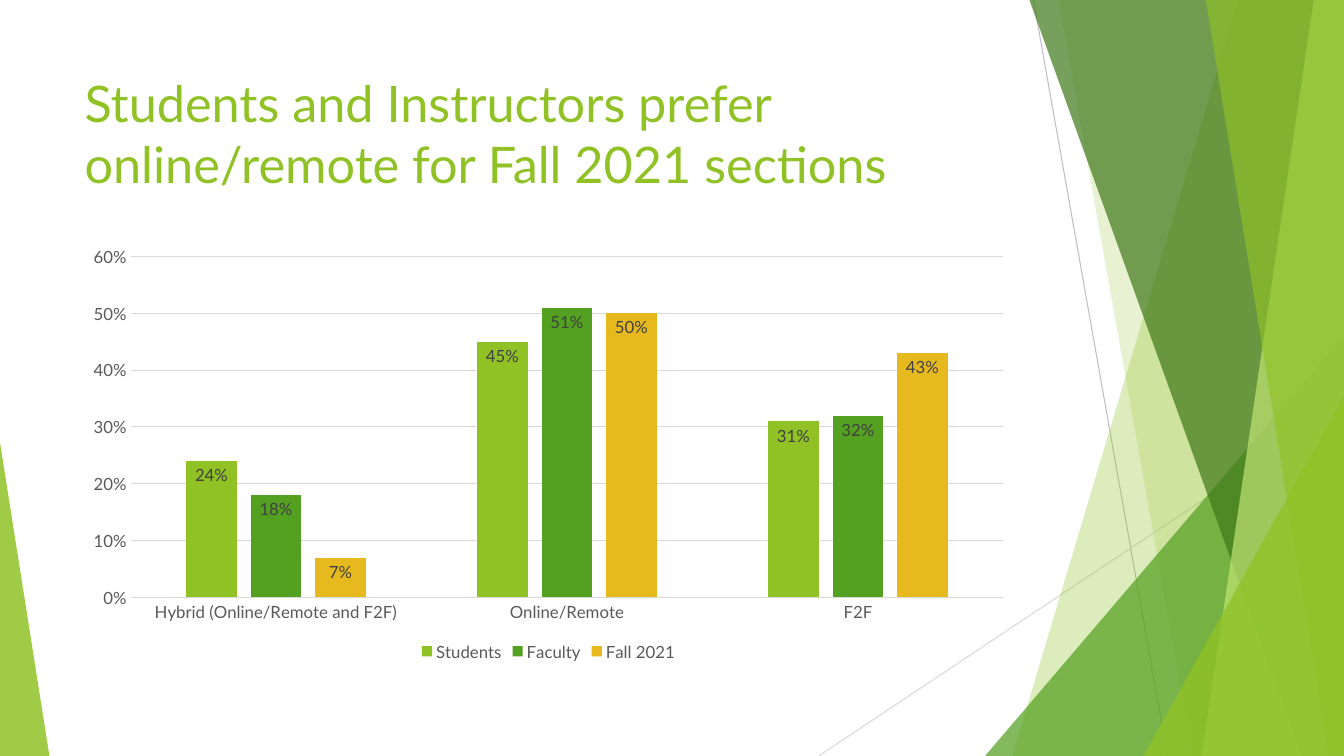
from collections import namedtuple

from lxml import etree
from pptx import Presentation
from pptx.chart.data import CategoryChartData
from pptx.dml.color import RGBColor
from pptx.enum.chart import XL_CHART_TYPE, XL_LABEL_POSITION, XL_LEGEND_POSITION, XL_TICK_MARK
from pptx.enum.shapes import MSO_CONNECTOR, MSO_SHAPE
from pptx.enum.text import MSO_ANCHOR
from pptx.oxml.ns import qn
from pptx.util import Inches, Pt

COLUMN_CLUSTERED = XL_CHART_TYPE.COLUMN_CLUSTERED
INSIDE_END = XL_LABEL_POSITION.INSIDE_END
BOTTOM = XL_LEGEND_POSITION.BOTTOM
NO_TICK = XL_TICK_MARK.NONE
STRAIGHT = MSO_CONNECTOR.STRAIGHT
TRIANGLE = MSO_SHAPE.ISOSCELES_TRIANGLE
TOP = MSO_ANCHOR.TOP

FONT = "Lato"
COLORS = {
    "lime": "90C226",
    "green": "54A021",
    "forest": "3F7819",
    "pale": "C0E474",
    "gold": "E6B91E",
    "axis_text": "595959",
    "label_text": "404040",
    "rule": "D9D9D9",
    "dark_rule": "BFBFBF",
}

COLS, ROWS = 13.33, 7.5
Box = namedtuple("Box", "x y w h")
FACETS = Box(8.12, 0, COLS - 8.12, ROWS)
CORNER = Box(0, 4.39, 0.49, ROWS - 4.39)
TITLE = Box(0.74, 0.67, 9.4, 1.44)
CHART = Box(0.74, 2.36, 9.4, 4.24)

CATEGORIES = ["Hybrid (Online/Remote and F2F)", "Online/Remote", "F2F"]
SERIES = [
    ("Students", [0.24, 0.45, 0.31], "lime"),
    ("Faculty", [0.18, 0.51, 0.32], "green"),
    ("Fall 2021", [0.07, 0.5, 0.43], "gold"),
]


def rgb(name):
    return RGBColor.from_string(COLORS[name])


def emu(box):
    return [Inches(v) for v in box]


def style_font(font, size, color):
    font.name = FONT
    font.size = Pt(size)
    font.color.rgb = rgb(color)


def style_line(line, color):
    line.color.rgb = rgb(color)
    line.width = Pt(0.75)


def paint(sp, color, opacity):
    sp.shadow.inherit = False
    sp.line.fill.background()
    sp.fill.solid()
    sp.fill.fore_color.rgb = rgb(color)
    clr = sp._element.spPr.find(qn("a:solidFill")).find(qn("a:srgbClr"))
    etree.SubElement(clr, qn("a:alpha")).set("val", str(opacity * 1000))


def add_rule(s, start, end, color):
    cxn = s.shapes.add_connector(STRAIGHT, *emu(start), *emu(end))
    style_line(cxn.line, color)
    etree.SubElement(cxn._element.spPr, qn("a:effectLst"))


def add_band(s, box, top_left, top_right, bottom_left, color, opacity):
    right, bottom = box.x + box.w, box.y + box.h
    corners = [(box.x + top_left, box.y), (box.x + top_right, box.y),
               (right, bottom), (box.x + bottom_left, bottom)]
    points = [(Inches(x), Inches(y)) for x, y in corners]
    builder = s.shapes.build_freeform(*points[0], scale=1.0)
    builder.add_line_segments(points[1:], close=True)
    paint(builder.convert_to_shape(), color, opacity)


def add_triangle(s, box, apex, color, opacity):
    sp = s.shapes.add_shape(TRIANGLE, *emu(box))
    sp.adjustments[0] = apex
    paint(sp, color, opacity)


def add_corner_triangle(s, box, w, h, color, opacity):
    corner = Box(box.x + box.w - w, box.y + box.h - h, w, h)
    add_triangle(s, corner, 1, color, opacity)


def add_facets(s, box):
    right, bottom = box.x + box.w, box.y + box.h
    add_rule(s, (box.x + 2.13, box.y), (box.x + 3.46, bottom), "dark_rule")
    add_rule(s, (right, box.y + 4.03), (box.x, bottom), "rule")
    add_band(s, box, 4.16, box.w, 1.92, "lime", 30)
    add_band(s, box, 2.38, box.w, 3.71, "lime", 20)
    add_corner_triangle(s, box, 3.56, 4.17, "green", 72)
    add_band(s, box, 2.09, box.w, 4.79, "forest", 70)
    add_band(s, box, 4.91, box.w, 3.8, "pale", 70)
    add_band(s, box, 3.84, box.w, 5.06, "lime", 65)
    add_corner_triangle(s, box, 1.99, 3.57, "lime", 80)


def add_title(s, box):
    tf = s.shapes.add_textbox(*emu(box)).text_frame
    tf.word_wrap = True
    tf.vertical_anchor = TOP
    p = tf.paragraphs[0]
    p.text = "Students and Instructors prefer online/remote for Fall 2021 sections"
    style_font(p.font, 36, "lime")


def style_axes(chart):
    cat, val = chart.category_axis, chart.value_axis
    for axis in (cat, val):
        axis.major_tick_mark = axis.minor_tick_mark = NO_TICK
        style_font(axis.tick_labels.font, 12, "axis_text")
    style_line(cat.format.line, "rule")
    val.format.line.fill.background()
    val.minimum_scale, val.maximum_scale, val.major_unit = 0, 0.6, 0.1
    val.has_major_gridlines = True
    style_line(val.major_gridlines.format.line, "rule")
    val.tick_labels.number_format = "0%"
    val.tick_labels.number_format_is_linked = False


def style_series(series, color):
    series.invert_if_negative = False
    series.format.fill.solid()
    series.format.fill.fore_color.rgb = rgb(color)
    labels = series.data_labels
    labels.show_value = True
    labels.position = INSIDE_END
    labels.number_format = "0%"
    labels.number_format_is_linked = False
    style_font(labels.font, 12, "label_text")


def add_preference_chart(s, box):
    data = CategoryChartData(number_format="0%")
    data.categories = CATEGORIES
    for name, values, _ in SERIES:
        data.add_series(name, values)
    chart = s.shapes.add_chart(COLUMN_CLUSTERED, *emu(box), data).chart
    chart.has_title = False
    chart.font.name = FONT
    chart.font.size = Pt(10)
    chart.has_legend = True
    chart.legend.position = BOTTOM
    chart.legend.include_in_layout = False
    style_font(chart.legend.font, 12, "axis_text")
    style_axes(chart)
    plot = chart.plots[0]
    plot.vary_by_categories = False
    plot.gap_width = 219
    plot.overlap = -27
    for series, (_, _, color) in zip(plot.series, SERIES):
        style_series(series, color)


def main():
    prs = Presentation()
    prs.slide_width, prs.slide_height = Inches(COLS), Inches(ROWS)
    s = prs.slides.add_slide(prs.slide_layouts[6])
    add_facets(s, FACETS)
    add_triangle(s, CORNER, 0, "lime", 85)
    add_title(s, TITLE)
    add_preference_chart(s, CHART)
    prs.save("out.pptx")


if __name__ == "__main__":
    main()
